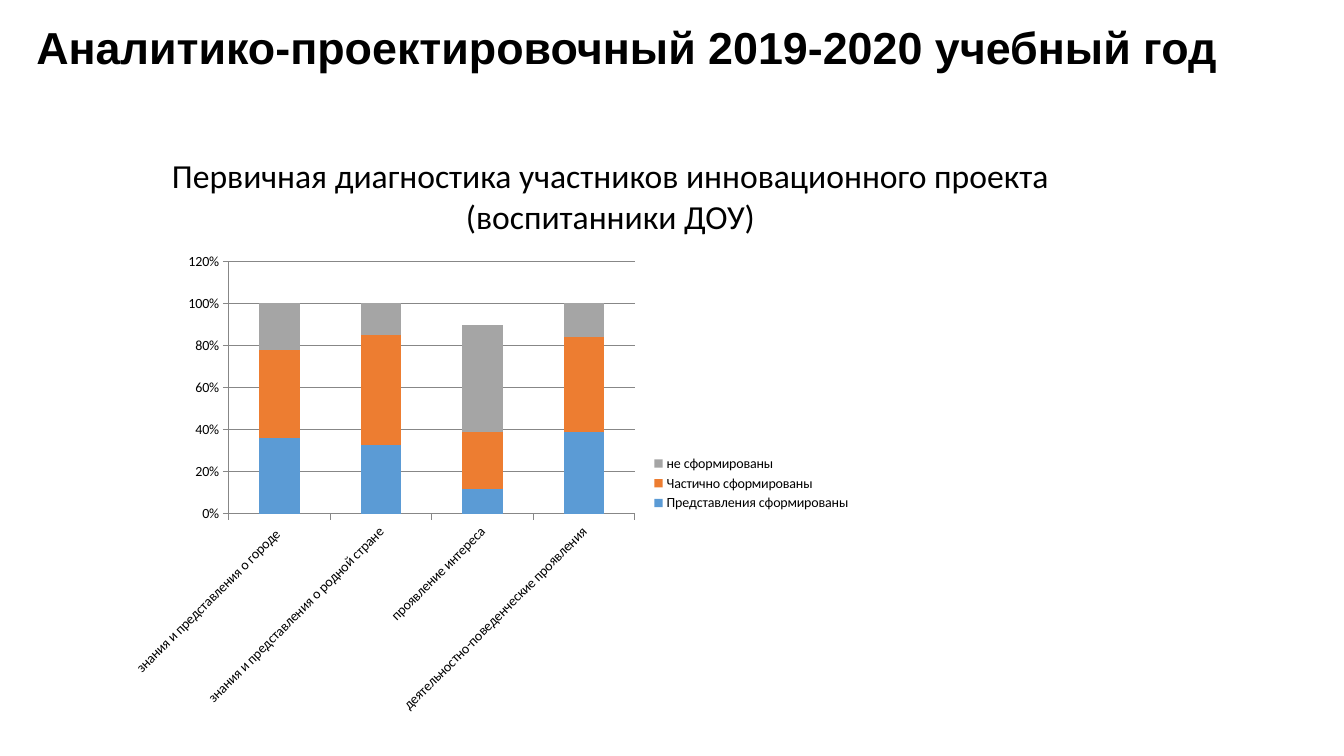
from pptx import Presentation
from pptx.chart.data import CategoryChartData
from pptx.dml.color import RGBColor
from pptx.enum.chart import XL_CHART_TYPE, XL_LEGEND_POSITION, XL_TICK_MARK
from pptx.enum.text import MSO_ANCHOR, PP_ALIGN
from pptx.oxml.ns import qn
from pptx.util import Inches, Pt

STACKED = XL_CHART_TYPE.COLUMN_STACKED
RIGHT = XL_LEGEND_POSITION.RIGHT
OUTSIDE = XL_TICK_MARK.OUTSIDE
MIDDLE = MSO_ANCHOR.MIDDLE
LEFT, CENTER = PP_ALIGN.LEFT, PP_ALIGN.CENTER

COLORS = {
    "text": "000000",
    "line": "878787",
    "formed": "5B9BD5",
    "partly": "ED7D31",
    "absent": "A5A5A5",
}


def color(name):
    return RGBColor.from_string(COLORS[name])


def style(font, size, face, bold=False):
    font.size = Pt(size)
    font.name = face
    font.bold = bold
    font.color.rgb = color("text")


deck = Presentation()
deck.slide_width, deck.slide_height = Inches(13.33), Inches(7.5)
slide = deck.slides.add_slide(deck.slide_layouts[5])

# Title
title = slide.shapes.title
title.left, title.top = Inches(0.26), Inches(0.16)
title.width, title.height = Inches(12.1), Inches(0.67)
frame = title.text_frame
frame.vertical_anchor = MIDDLE
para = frame.paragraphs[0]
para.alignment = LEFT
para.line_spacing = 0.9
run = para.add_run()
run.text = "Аналитико-проектировочный 2019-2020 учебный год"
style(run.font, 32, "Arial", True)

# Chart heading
box = slide.shapes.add_textbox(Inches(0.58), Inches(1.49), Inches(10.95), Inches(0.91))
box.text_frame.word_wrap = True
para = box.text_frame.paragraphs[0]
para.alignment = CENTER
lines = ["Первичная диагностика участников инновационного проекта", "(воспитанники ДОУ)"]
for i, line in enumerate(lines):
    if i:
        para.add_line_break()
    run = para.add_run()
    run.text = line
    style(run.font, 24, "Calibri")

# Stacked column chart
levels = [
    ("Представления сформированы", "formed", [0.36, 0.33, 0.12, 0.39]),
    ("Частично сформированы", "partly", [0.42, 0.52, 0.27, 0.45]),
    ("не сформированы", "absent", [0.22, 0.15, 0.51, 0.16]),
]
data = CategoryChartData(number_format="0%")
data.categories = [
    "знания и представления о городе ",
    "знания и представления о родной стране",
    "проявление интереса",
    "деятельностно-поведенческие проявления",
]
for name, key, values in levels:
    data.add_series(name, values)

chart = slide.shapes.add_chart(
    STACKED, Inches(1.17), Inches(2.42), Inches(7.37), Inches(4.75), data
).chart
chart.has_title = False
style(chart.font, 10, "Calibri")
chart.has_legend = True
chart.legend.position = RIGHT
chart.legend.include_in_layout = False

plot = chart.plots[0]
plot.vary_by_categories = False
plot.gap_width, plot.overlap = 150, 100
for series, (name, key, values) in zip(plot.series, levels):
    series.format.fill.solid()
    series.format.fill.fore_color.rgb = color(key)

cat, val = chart.category_axis, chart.value_axis
val.minimum_scale, val.maximum_scale, val.major_unit = 0, 1.2, 0.2
val.tick_labels.number_format = "0%"
val.tick_labels.number_format_is_linked = False
val.has_major_gridlines = True
for item in (cat, val, val.major_gridlines):
    item.format.line.color.rgb = color("line")
    item.format.line.width = Pt(0.75)
for axis in (cat, val):
    axis.major_tick_mark = OUTSIDE
    style(axis.tick_labels.font, 10, "Calibri")

# Slanted category labels
body = cat._element.find(qn("c:txPr")).find(qn("a:bodyPr"))
body.set("rot", "-2700000")
body.set("vert", "horz")

deck.save("out.pptx")
